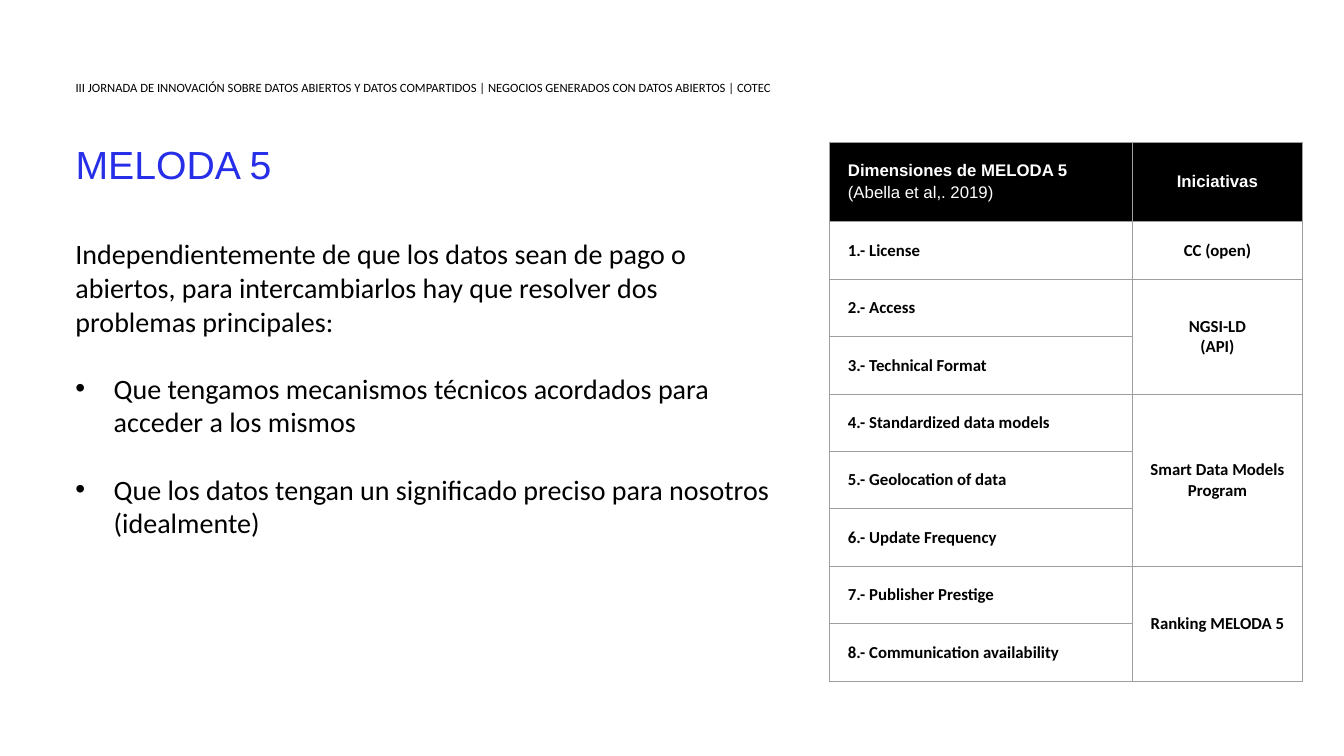
from dataclasses import dataclass

import lxml.etree
import pptx
import pptx.dml.color
import pptx.enum.text
import pptx.oxml.ns
import pptx.util

Inches = pptx.util.Inches
Pt = pptx.util.Pt
Anchor = pptx.enum.text.MSO_ANCHOR
Align = pptx.enum.text.PP_ALIGN


@dataclass(frozen=True)
class Theme:
    heading_font: str = "Arial"
    body_font: str = "Calibri"
    accent: str = "272EE8"
    ink: str = "000000"
    paper: str = "FFFFFF"
    grid: str = "9E9E9E"
    title_size: float = 28
    body_size: float = 20
    table_size: float = 12
    event_size: float = 9


@dataclass(frozen=True)
class Line:
    text: str
    bold: bool = False
    bullet: bool = False
    space_before: float = 0
    line_spacing: float = 1.0


@dataclass(frozen=True)
class Style:
    font: str
    size: float
    color: str
    align: Align = Align.LEFT


@dataclass(frozen=True)
class Block:
    left: float
    top: float
    width: float
    height: float
    lines: tuple[Line, ...]
    style: Style
    inset_x: float = 0.03
    inset_y: float = 0.03
    anchor: Anchor = Anchor.TOP


@dataclass(frozen=True)
class Initiative:
    lines: tuple[str, ...]
    dimensions: tuple[str, ...]


THEME = Theme()
BODY = Style(THEME.body_font, THEME.body_size, THEME.ink)
BLOCKS = (
    Block(0.72, 1.36, 8.11, 0.53, (Line("MELODA 5"),),
          Style(THEME.heading_font, THEME.title_size, THEME.accent)),
    Block(0.72, 0.76, 8.6, 0.21,
          (Line("III JORNADA DE INNOVACIÓN SOBRE DATOS ABIERTOS Y DATOS COMPARTIDOS"
                " | NEGOCIOS GENERADOS CON DATOS ABIERTOS | COTEC"),),
          Style(THEME.body_font, THEME.event_size, THEME.ink), anchor=Anchor.MIDDLE),
    Block(0.65, 2.3, 7.17, 3.47,
          (Line("Independientemente de que los datos sean de pago o abiertos, "
                "para intercambiarlos hay que resolver dos problemas principales:"),
           Line("Que tengamos mecanismos técnicos acordados para acceder a los mismos",
                bullet=True, space_before=24),
           Line("Que los datos tengan un significado preciso para nosotros (idealmente)",
                bullet=True, space_before=24)),
          BODY, inset_x=0.1, inset_y=0.05),
)
INITIATIVES = (
    Initiative(("CC (open)",), ("License",)),
    Initiative(("NGSI-LD", "(API)"), ("Access", "Technical Format")),
    Initiative(("Smart Data Models Program",),
               ("Standardized data models", "Geolocation of data", "Update Frequency")),
    Initiative(("Ranking MELODA 5",), ("Publisher Prestige", "Communication availability")),
)
COLUMN_WIDTHS = (3.0, 1.69)
HEADER_HEIGHT = 0.79
ROW_HEIGHT = 0.57
CELL_INSET = 0.18
HANGING_INDENT = 0.38


def add_bullet(paragraph: pptx.text.text._Paragraph) -> None:
    """Give a paragraph a hanging round bullet."""
    properties = paragraph._p.get_or_add_pPr()
    indent = Inches(HANGING_INDENT)
    properties.set("marL", str(indent))
    properties.set("indent", str(-indent))
    qn = pptx.oxml.ns.qn
    lxml.etree.SubElement(properties, qn("a:buFont"), typeface="Arial")
    lxml.etree.SubElement(properties, qn("a:buChar"), char="•")


def write_lines(frame: pptx.text.text.TextFrame, lines: tuple[Line, ...], style: Style) -> None:
    """Write styled paragraphs into a text frame."""
    for index, line in enumerate(lines):
        paragraph = frame.add_paragraph() if index else frame.paragraphs[0]
        paragraph.text = line.text
        paragraph.alignment = style.align
        if line.bullet:
            add_bullet(paragraph)
        if line.space_before:
            paragraph.space_before = Pt(line.space_before)
        paragraph.line_spacing = line.line_spacing
        font = paragraph.font
        font.name = style.font
        font.size = Pt(style.size)
        font.bold = line.bold
        font.color.rgb = pptx.dml.color.RGBColor.from_string(style.color)


def draw_block(slide: pptx.slide.Slide, block: Block) -> None:
    """Draw one wrapped text block."""
    box = slide.shapes.add_textbox(Inches(block.left), Inches(block.top),
                                   Inches(block.width), Inches(block.height))
    frame = box.text_frame
    frame.word_wrap = True
    frame.vertical_anchor = block.anchor
    frame.margin_left = frame.margin_right = Inches(block.inset_x)
    frame.margin_top = frame.margin_bottom = Inches(block.inset_y)
    write_lines(frame, block.lines, block.style)


def format_cell(cell: pptx.table._Cell, fill: str) -> None:
    """Set the insets, borders and fill of a table cell."""
    cell.vertical_anchor = Anchor.MIDDLE
    cell.margin_left = cell.margin_right = Inches(CELL_INSET)
    cell.margin_top = cell.margin_bottom = Inches(CELL_INSET)
    qn = pptx.oxml.ns.qn
    properties = cell._tc.get_or_add_tcPr()
    for side in ("a:lnL", "a:lnR", "a:lnT", "a:lnB"):
        border = lxml.etree.SubElement(properties, qn(side), w=str(Pt(0.75)))
        solid = lxml.etree.SubElement(border, qn("a:solidFill"))
        lxml.etree.SubElement(solid, qn("a:srgbClr"), val=THEME.grid)
    cell.fill.solid()
    cell.fill.fore_color.rgb = pptx.dml.color.RGBColor.from_string(fill)


def draw_table(slide: pptx.slide.Slide) -> None:
    """Draw the dimensions and the initiatives that cover them."""
    row_count = 1 + sum(len(initiative.dimensions) for initiative in INITIATIVES)
    height = HEADER_HEIGHT + ROW_HEIGHT * (row_count - 1)
    table = slide.shapes.add_table(row_count, len(COLUMN_WIDTHS), Inches(8.23), Inches(1.41),
                                   Inches(sum(COLUMN_WIDTHS)), Inches(height)).table
    for column, width in zip(table.columns, COLUMN_WIDTHS):
        column.width = Inches(width)
    for index, row in enumerate(table.rows):
        row.height = Inches(ROW_HEIGHT if index else HEADER_HEIGHT)
        for cell in row.cells:
            format_cell(cell, THEME.paper if index else THEME.ink)

    size = THEME.table_size
    write_lines(table.cell(0, 0).text_frame,
                (Line("Dimensiones de MELODA 5", bold=True),
                 Line("(Abella et al,. 2019)", line_spacing=1.15)),
                Style(THEME.heading_font, size, THEME.paper))
    write_lines(table.cell(0, 1).text_frame, (Line("Iniciativas", bold=True),),
                Style(THEME.heading_font, size, THEME.paper, Align.CENTER))

    dimension_style = Style(THEME.body_font, size, THEME.ink)
    initiative_style = Style(THEME.body_font, size, THEME.ink, Align.CENTER)
    first = 1
    for initiative in INITIATIVES:
        last = first + len(initiative.dimensions) - 1
        for number, dimension in enumerate(initiative.dimensions, first):
            write_lines(table.cell(number, 0).text_frame,
                        (Line(f"{number}.- {dimension}", bold=True),), dimension_style)
        if last > first:
            table.cell(first, 1).merge(table.cell(last, 1))
        write_lines(table.cell(first, 1).text_frame,
                    tuple(Line(text, bold=True) for text in initiative.lines),
                    initiative_style)
        first = last + 1


def main() -> None:
    """Build and save the slide."""
    deck = pptx.Presentation()
    deck.slide_width = Inches(13.33)
    deck.slide_height = Inches(7.5)
    slide = deck.slides.add_slide(deck.slide_layouts[6])
    for block in BLOCKS:
        draw_block(slide, block)
    draw_table(slide)
    deck.save("out.pptx")


if __name__ == "__main__":
    main()
